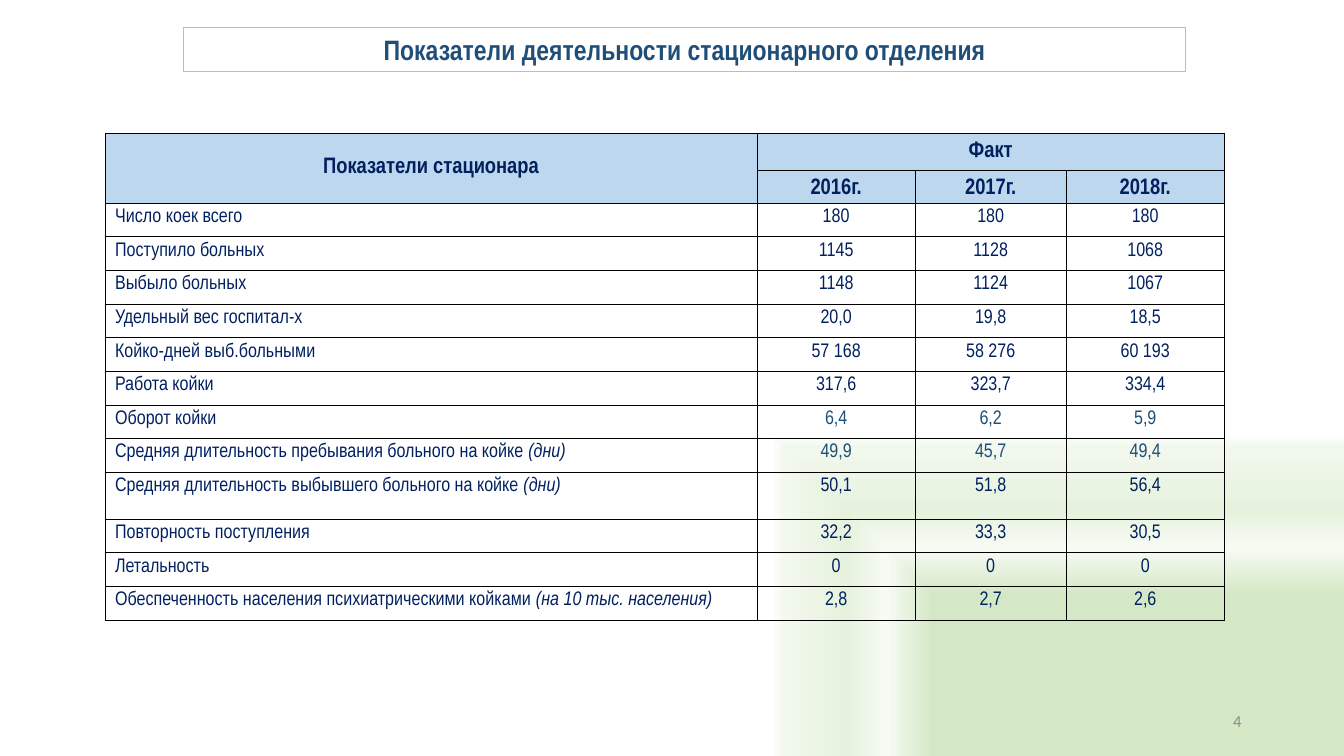
from pptx import Presentation
from pptx.dml.color import RGBColor
from pptx.enum.text import MSO_ANCHOR as Anchor, PP_ALIGN as Align
from pptx.oxml import parse_xml
from pptx.oxml.ns import nsdecls, qn
from pptx.util import Pt

NAVY, BLUE, HEADER_FILL = "002060", "1F4E79", "BDD7EE"
GRADIENT_STOPS = [(43, "D4E8C6"), (55, "F7FBF4"), (65, "E6F2DE"), (82, "F2F8ED"), (85, "FFFFFF")]
COLUMN_WIDTHS = [465.8, 113, 107.8, 113]
YEARS = ["2016г.", "2017г.", "2018г."]
INDICATORS = [
    ("Число коек всего", "", ["180", "180", "180"], NAVY),
    ("Поступило больных", "", ["1145", "1128", "1068"], NAVY),
    ("Выбыло больных", "", ["1148", "1124", "1067"], NAVY),
    ("Удельный вес госпитал-х", "", ["20,0", "19,8", "18,5"], NAVY),
    ("Койко-дней выб.больными", "", ["57 168", "58 276", "60 193"], NAVY),
    ("Работа койки", "", ["317,6", "323,7", "334,4"], NAVY),
    ("Оборот койки", "", ["6,4", "6,2", "5,9"], BLUE),
    ("Средняя длительность пребывания больного на койке ", "(дни)", ["49,9", "45,7", "49,4"], BLUE),
    ("Средняя длительность выбывшего больного на койке ", "(дни)", ["50,1", "51,8", "56,4"], NAVY),
    ("Повторность поступления", "", ["32,2", "33,3", "30,5"], NAVY),
    ("Летальность", "", ["0", "0", "0"], NAVY),
    ("Обеспеченность населения психиатрическими койками ", "(на 10 тыс. населения)",
     ["2,8", "2,7", "2,6"], NAVY),
]
ROW_HEIGHTS = [26.4, 22.1] + [23.8] * 8 + [33.5] + [23.8] * 3


def color(value):
    """Return the colour for a hex string."""
    return RGBColor.from_string(value)


def write(frame, text, size, ink, align=Align.CENTER, bold=False, name="Arial Narrow"):
    """Write one formatted paragraph and return it."""
    paragraph = frame.paragraphs[0]
    paragraph.add_run().text = text
    paragraph.alignment = align
    font = paragraph.font
    font.name, font.size, font.bold = name, Pt(size), bold
    font.color.rgb = color(ink)
    return paragraph


def set_background(slide):
    """Fill the background with a gradient that spreads from the lower right."""
    slide.background.fill.gradient()
    stops = "".join(f'<a:gs pos="{position * 1000}"><a:srgbClr val="{value}"/></a:gs>'
                    for position, value in GRADIENT_STOPS)
    gradient = parse_xml(
        f'<a:gradFill {nsdecls("a")} rotWithShape="1"><a:gsLst>{stops}</a:gsLst>'
        '<a:path path="rect"><a:fillToRect l="100000" t="100000"/></a:path></a:gradFill>')
    default = slide.element.find(".//" + qn("a:gradFill"))
    default.getparent().replace(default, gradient)


def add_title(slide, text):
    """Place the outlined title."""
    title = slide.shapes.title
    title.left, title.top, title.width, title.height = Pt(131), Pt(19.4), Pt(716), Pt(31.7)
    title.line.color.rgb = color("9DC3E6")
    title.line.width = Pt(0.75)
    title.text_frame.vertical_anchor = Anchor.TOP
    write(title.text_frame, text, 20, BLUE, bold=True)


def add_page_number(slide, number):
    """Place the page number."""
    frame = slide.shapes.add_textbox(Pt(678), Pt(500.5), Pt(216), Pt(28.8)).text_frame
    frame.word_wrap = True
    frame.vertical_anchor = Anchor.MIDDLE
    write(frame, number, 12, "8C8C8C", Align.RIGHT, name="Calibri")


def add_borders(cell):
    """Draw thin black lines on all four sides of a cell."""
    properties = cell._tc.get_or_add_tcPr()
    for index, side in enumerate("LRTB"):
        properties.insert(index, parse_xml(
            f'<a:ln{side} {nsdecls("a")} w="{Pt(0.5)}"><a:solidFill>'
            f'<a:srgbClr val="000000"/></a:solidFill></a:ln{side}>'))


def tighten(cell):
    """Give a cell narrow margins."""
    cell.margin_left = cell.margin_right = cell.margin_top = cell.margin_bottom = Pt(0.7)


def fill_header(table):
    """Fill the two header rows."""
    table.cell(0, 0).merge(table.cell(1, 0))
    table.cell(0, 1).merge(table.cell(0, 3))
    headings = [(0, 0, "Показатели стационара"), (0, 1, "Факт")]
    headings += [(1, column, year) for column, year in enumerate(YEARS, 1)]
    for row, column, text in headings:
        cell = table.cell(row, column)
        cell.vertical_anchor = Anchor.MIDDLE
        paragraph = write(cell.text_frame, text, 16, NAVY, bold=True)
        if row == 1:
            tighten(cell)
            paragraph.line_spacing = 1.15
            paragraph.space_after = Pt(1)
    for row in range(2):
        tighten(table.cell(row, 0))
    table.cell(1, 0).text_frame.paragraphs[0].font.size = Pt(12)


def fill_indicators(table):
    """Fill one row for each indicator."""
    for row, (label, detail, values, ink) in enumerate(INDICATORS, 2):
        paragraph = write(table.cell(row, 0).text_frame, label, 14, NAVY, Align.LEFT)
        if detail:
            run = paragraph.add_run()
            run.text = detail
            run.font.italic = True
        for column, value in enumerate(values, 1):
            write(table.cell(row, column).text_frame, value, 14, ink)


def add_indicator_table(slide):
    """Add the table of indicators."""
    table = slide.shapes.add_table(
        len(ROW_HEIGHTS), len(COLUMN_WIDTHS), Pt(75), Pt(95.2),
        Pt(sum(COLUMN_WIDTHS)), Pt(sum(ROW_HEIGHTS))).table
    table.first_row = table.horz_banding = False
    for column, width in zip(table.columns, COLUMN_WIDTHS):
        column.width = Pt(width)
    for index, (row, height) in enumerate(zip(table.rows, ROW_HEIGHTS)):
        row.height = Pt(height)
        for cell in row.cells:
            add_borders(cell)
            if index < 2:
                cell.fill.solid()
                cell.fill.fore_color.rgb = color(HEADER_FILL)
            else:
                cell.fill.background()
    fill_header(table)
    fill_indicators(table)


def main():
    """Build the slide and save it."""
    presentation = Presentation()
    presentation.slide_width, presentation.slide_height = Pt(960), Pt(540)
    slide = presentation.slides.add_slide(presentation.slide_layouts[5])
    set_background(slide)
    add_page_number(slide, "4")
    add_indicator_table(slide)
    add_title(slide, "Показатели деятельности стационарного отделения")
    presentation.save("out.pptx")


if __name__ == "__main__":
    main()
